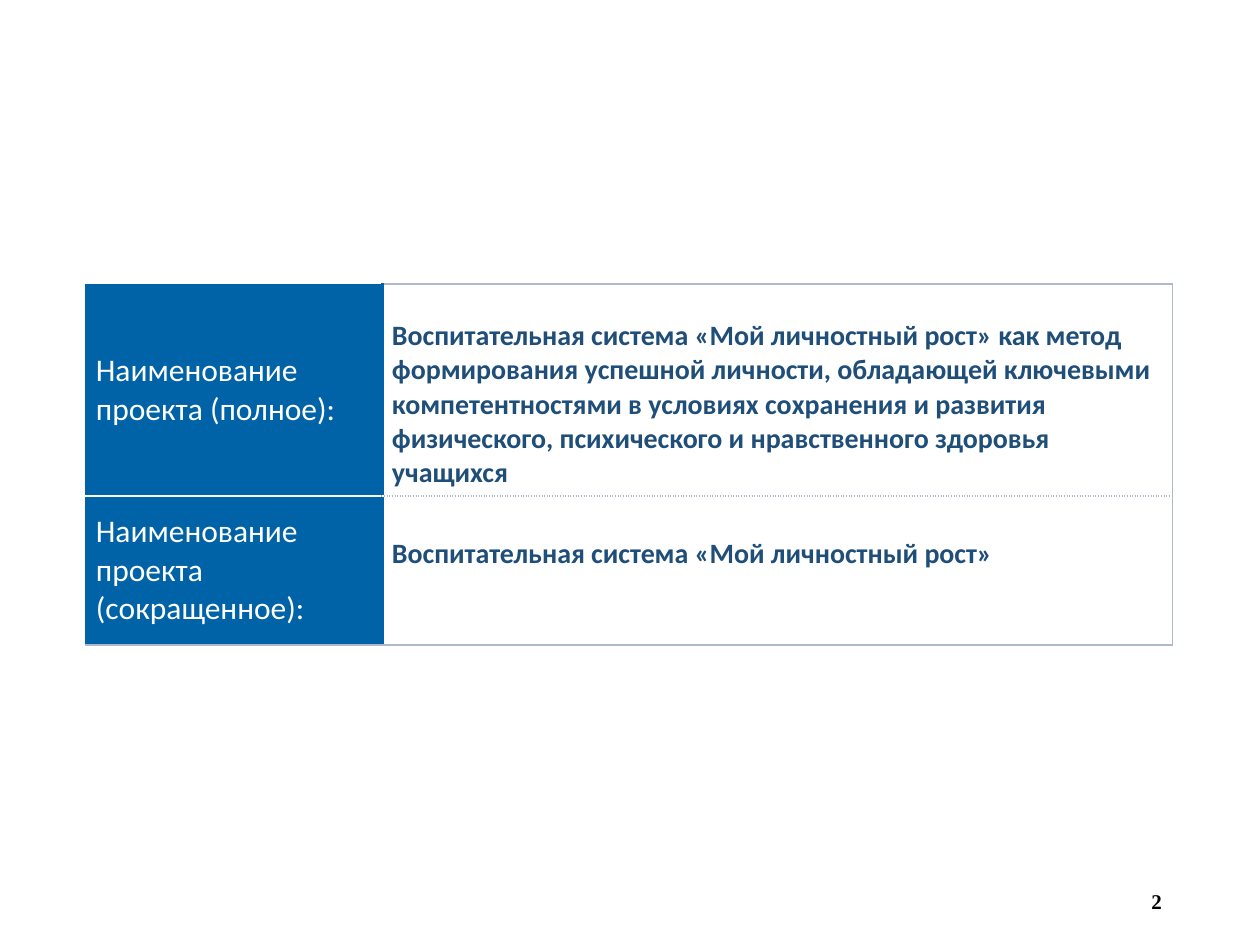
from dataclasses import dataclass
from typing import Optional

from lxml import etree
from pptx import Presentation
from pptx.dml.color import RGBColor
from pptx.enum.text import MSO_ANCHOR, PP_ALIGN
from pptx.oxml.ns import qn
from pptx.util import Pt

TOP, MIDDLE = MSO_ANCHOR.TOP, MSO_ANCHOR.MIDDLE
RIGHT = PP_ALIGN.RIGHT
BLUE, NAVY, GREY, WHITE, BLACK = "0062A7", "1F4E79", "B0B9CB", "FFFFFF", "000000"


@dataclass
class Line:
    color: str
    width: float
    dash: str = "solid"


@dataclass
class ProjectRow:
    height: float
    label: str
    value: str
    value_top: float  # inset above the value text


ROWS = [
    ProjectRow(121.2, "Наименование проекта (полное):",
               "Воспитательная система «Мой личностный рост» как метод формирования "
               "успешной личности, обладающей ключевыми компетентностями в условиях "
               "сохранения и развития физического, психического и нравственного "
               "здоровья учащихся", 20),
    ProjectRow(85, "Наименование проекта (сокращенное):",
               "Воспитательная система «Мой личностный рост»", 23.2),
]
COLUMN_WIDTHS = [169.2, 451.4]
LABEL_FONT = {"name": "Calibri", "size": Pt(18), "bold": False}
VALUE_FONT = {"name": "Calibri", "size": Pt(16), "bold": True}
NUMBER_FONT = {"name": "Times New Roman", "size": Pt(12), "bold": True}

BLUE_LINE, WHITE_LINE = Line(BLUE, 1.5), Line(WHITE, 1.5)
GREY_LINE, DOTTED_LINE = Line(GREY, 1), Line(GREY, 1.5, "sysDot")


def rgb(value: str) -> RGBColor:
    return RGBColor.from_string(value)


def write(tf, text: str, font: dict, color: str) -> None:
    tf.word_wrap = True
    r = tf.paragraphs[0].add_run()
    r.text = text
    for name, value in font.items():
        setattr(r.font, name, value)
    r.font.color.rgb = rgb(color)


def set_borders(cell, borders: dict[str, Optional[Line]]) -> None:
    """Borders go before the cell fill, in the order L, R, T, B."""
    tc_pr = cell._tc.get_or_add_tcPr()
    for i, (side, line) in enumerate(borders.items()):
        ln = etree.Element(qn(f"a:ln{side}"))
        if line is None:
            etree.SubElement(ln, qn("a:noFill"))
        else:
            ln.set("w", str(Pt(line.width)))
            fill = etree.SubElement(ln, qn("a:solidFill"))
            etree.SubElement(fill, qn("a:srgbClr"), val=line.color)
            etree.SubElement(ln, qn("a:prstDash"), val=line.dash)
        tc_pr.insert(i, ln)


def fill_cell(cell, text: str, font: dict, color: str, fill: str, anchor,
              top: float, borders: dict[str, Optional[Line]]) -> None:
    layout = {"vertical_anchor": anchor, "margin_left": Pt(5.4),
              "margin_right": Pt(5.4), "margin_top": Pt(top), "margin_bottom": Pt(3.6)}
    for name, value in layout.items():
        setattr(cell, name, value)
    cell.fill.solid()
    cell.fill.fore_color.rgb = rgb(fill)
    write(cell.text_frame, text, font, color)
    set_borders(cell, borders)


def add_project_table(s, rows: list[ProjectRow]) -> None:
    table = s.shapes.add_table(len(rows), 2, Pt(49.4), Pt(162.3), Pt(sum(COLUMN_WIDTHS)),
                               Pt(sum(row.height for row in rows))).table
    table.first_row = table.horz_banding = False
    for column, width in zip(table.columns, COLUMN_WIDTHS):
        column.width = Pt(width)
    for i, row in enumerate(rows):
        first, last = i == 0, i == len(rows) - 1
        table.rows[i].height = Pt(row.height)
        fill_cell(table.cell(i, 0), row.label, LABEL_FONT, WHITE, BLUE, MIDDLE, 3.6,
                  {"L": BLUE_LINE, "R": BLUE_LINE,
                   "T": None if first else WHITE_LINE,
                   "B": GREY_LINE if last else WHITE_LINE})
        fill_cell(table.cell(i, 1), row.value, VALUE_FONT, NAVY, WHITE, TOP, row.value_top,
                  {"L": BLUE_LINE, "R": GREY_LINE,
                   "T": GREY_LINE if first else DOTTED_LINE,
                   "B": GREY_LINE if last else DOTTED_LINE})


def add_slide_number(s, number: str) -> None:
    tf = s.shapes.add_textbox(Pt(509), Pt(500.4), Pt(162), Pt(28.8)).text_frame
    tf.vertical_anchor = MIDDLE
    write(tf, number, NUMBER_FONT, BLACK)
    tf.paragraphs[0].alignment = RIGHT


def main() -> None:
    prs = Presentation()
    prs.slide_width, prs.slide_height = Pt(720), Pt(540)
    s = prs.slides.add_slide(prs.slide_layouts[6])
    add_slide_number(s, "2")
    add_project_table(s, ROWS)
    prs.save("out.pptx")


if __name__ == "__main__":
    main()
